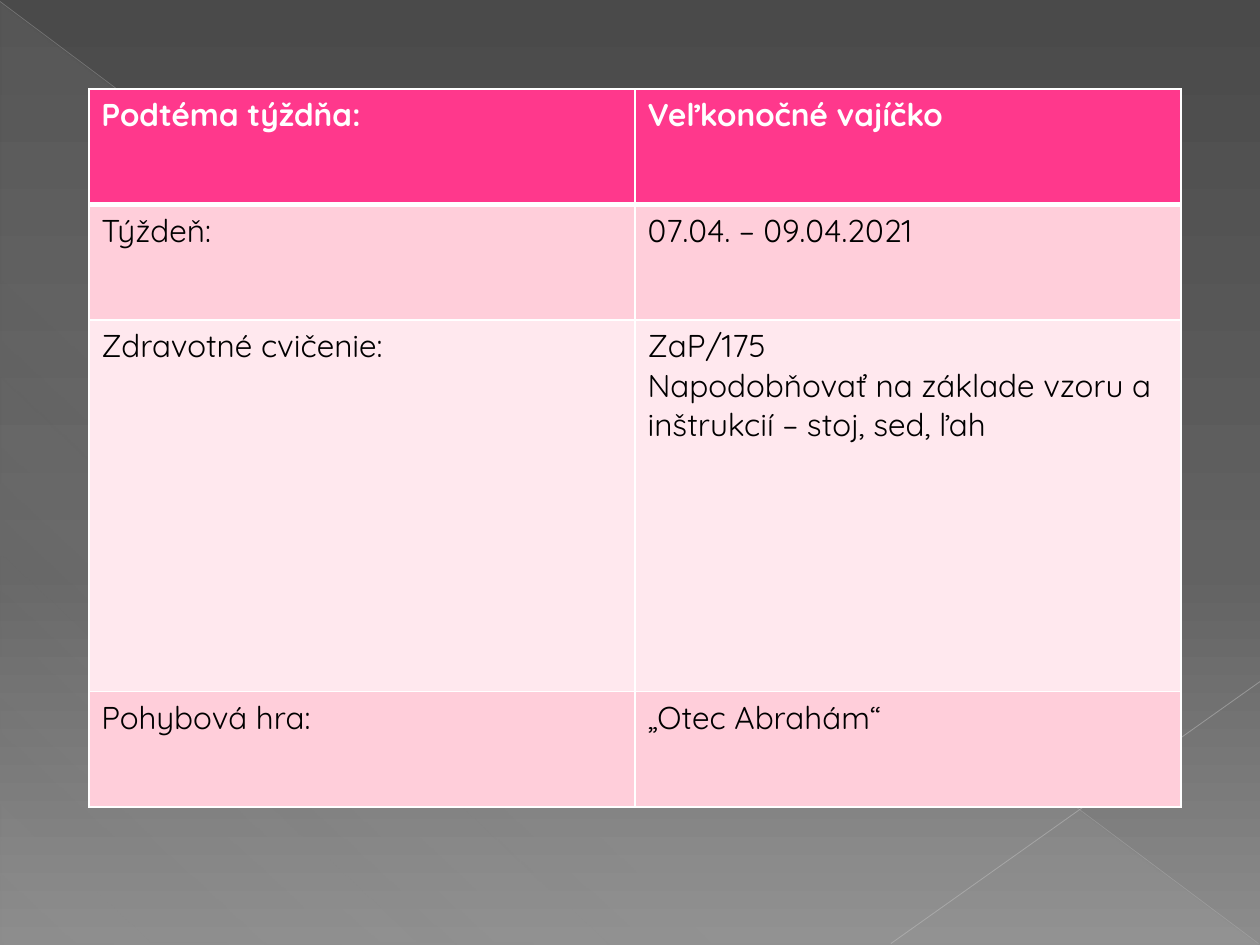
from pptx import Presentation
from pptx import util as u
from pptx.dml.color import RGBColor
from pptx.enum import shapes
from pptx.oxml import parse_xml
from pptx.oxml.ns import nsdecls, qn

FONT = "Quicksand"
WHITE = RGBColor(0xFF, 0xFF, 0xFF)
BLACK = RGBColor(0x00, 0x00, 0x00)
PINK = RGBColor(0xFF, 0x38, 0x8C)
ROSE = RGBColor(0xFF, 0xCE, 0xDA)
BLUSH = RGBColor(0xFF, 0xE8, 0xEE)
DARK_GREY = RGBColor(0x4A, 0x4A, 0x4A)
MID_GREY = RGBColor(0x62, 0x62, 0x62)
LIGHT_GREY = RGBColor(0x8C, 0x8C, 0x8C)
HAZE = RGBColor(0xD2, 0xD2, 0xD2)
DIAGONAL_GREY = RGBColor(0xBF, 0xBF, 0xBF)
CORNER_GREY = RGBColor(0xC6, 0xC6, 0xC6)

ROWS = [
    ("Podtéma týždňa:", "Veľkonočné vajíčko"),
    ("Týždeň:", "07.04. – 09.04.2021"),
    (
        "Zdravotné cvičenie:",
        "ZaP/175\nNapodobňovať na základe vzoru a inštrukcií – stoj, sed, ľah",
    ),
    ("Pohybová hra:", "„Otec Abrahám“"),
]
ROW_HEIGHTS = [2.33, 2.33, 7.49, 2.33]
COLUMN_WIDTH = 11.01


def set_gradient(fill, element, stops, angle):
    fill.gradient()
    fill.gradient_angle = -angle % 360
    stop_list = next(element.iter(qn("a:gsLst")))
    for stop in list(stop_list):
        stop_list.remove(stop)
    for position, color, opacity in stops:
        stop_list.append(parse_xml(
            f'<a:gs {nsdecls("a")} pos="{position * 1000}"><a:srgbClr val="{color}">'
            f'<a:alpha val="{opacity * 1000}"/></a:srgbClr></a:gs>'
        ))


def add_haze(slide):
    triangle = slide.shapes.add_shape(
        shapes.MSO_SHAPE.RIGHT_TRIANGLE, u.Cm(0.02), u.Cm(0.05), u.Cm(25.36), u.Cm(19)
    )
    triangle.shadow.inherit = False
    triangle.line.fill.background()
    stops = [(0, HAZE, 10), (70, HAZE, 8), (100, HAZE, 1)]
    set_gradient(triangle.fill, triangle.element.spPr, stops, 133)


def add_line(slide, start, end, color, width, opacity):
    line = slide.shapes.add_connector(
        shapes.MSO_CONNECTOR.STRAIGHT, *map(u.Cm, start + end)
    )
    line.line.color.rgb = color
    line.line.width = u.Pt(width)
    properties = line.element.spPr
    color_element = next(properties.iter(qn("a:srgbClr")))
    color_element.append(parse_xml(f'<a:alpha {nsdecls("a")} val="{opacity * 1000}"/>'))
    properties.append(parse_xml(f'<a:effectLst {nsdecls("a")}/>'))


def write_text(frame, content, size=18, color=BLACK, bold=False):
    frame.word_wrap = True
    frame.text = content
    for paragraph in frame.paragraphs:
        for run in paragraph.runs:
            run.font.name = FONT
            run.font.size = u.Pt(size)
            run.font.bold = bold
            run.font.color.rgb = color


def set_borders(cell, **widths):
    properties = cell._tc.get_or_add_tcPr()
    for side in "LRTB":
        width = u.Pt(widths.get(side, 1))
        properties.append(parse_xml(
            f'<a:ln{side} {nsdecls("a")} w="{width}"><a:solidFill>'
            f'<a:srgbClr val="{WHITE}"/></a:solidFill></a:ln{side}>'
        ))


def add_plan_table(slide):
    table = slide.shapes.add_table(
        len(ROWS), 2, u.Cm(1.79), u.Cm(1.79),
        u.Cm(2 * COLUMN_WIDTH), u.Cm(sum(ROW_HEIGHTS)),
    ).table
    for column in table.columns:
        column.width = u.Cm(COLUMN_WIDTH)
    for index, (contents, height) in enumerate(zip(ROWS, ROW_HEIGHTS)):
        header = index == 0
        table.rows[index].height = u.Cm(height)
        for cell, content in zip(table.rows[index].cells, contents):
            write_text(
                cell.text_frame, content, color=WHITE if header else BLACK, bold=header
            )
            set_borders(cell, T=3 if index == 1 else 1, B=3 if header else 1)
            cell.fill.solid()
            cell.fill.fore_color.rgb = PINK if header else ROSE if index % 2 else BLUSH


def main():
    presentation = Presentation()
    presentation.slide_width = u.Cm(25.4)
    presentation.slide_height = u.Cm(19.05)
    slide = presentation.slides.add_slide(presentation.slide_layouts[6])
    stops = [(0, DARK_GREY, 100), (60, MID_GREY, 100), (100, LIGHT_GREY, 100)]
    set_gradient(slide.background.fill, slide.element, stops, 90)
    add_haze(slide)
    add_line(slide, (0, 0.03), (25.37, 19.02), DIAGONAL_GREY, 0.39, 35)
    add_line(slide, (25.4, 13.74), (17.96, 19.02), CORNER_GREY, 0.47, 45)
    add_plan_table(slide)
    presentation.save("out.pptx")


if __name__ == "__main__":
    main()
